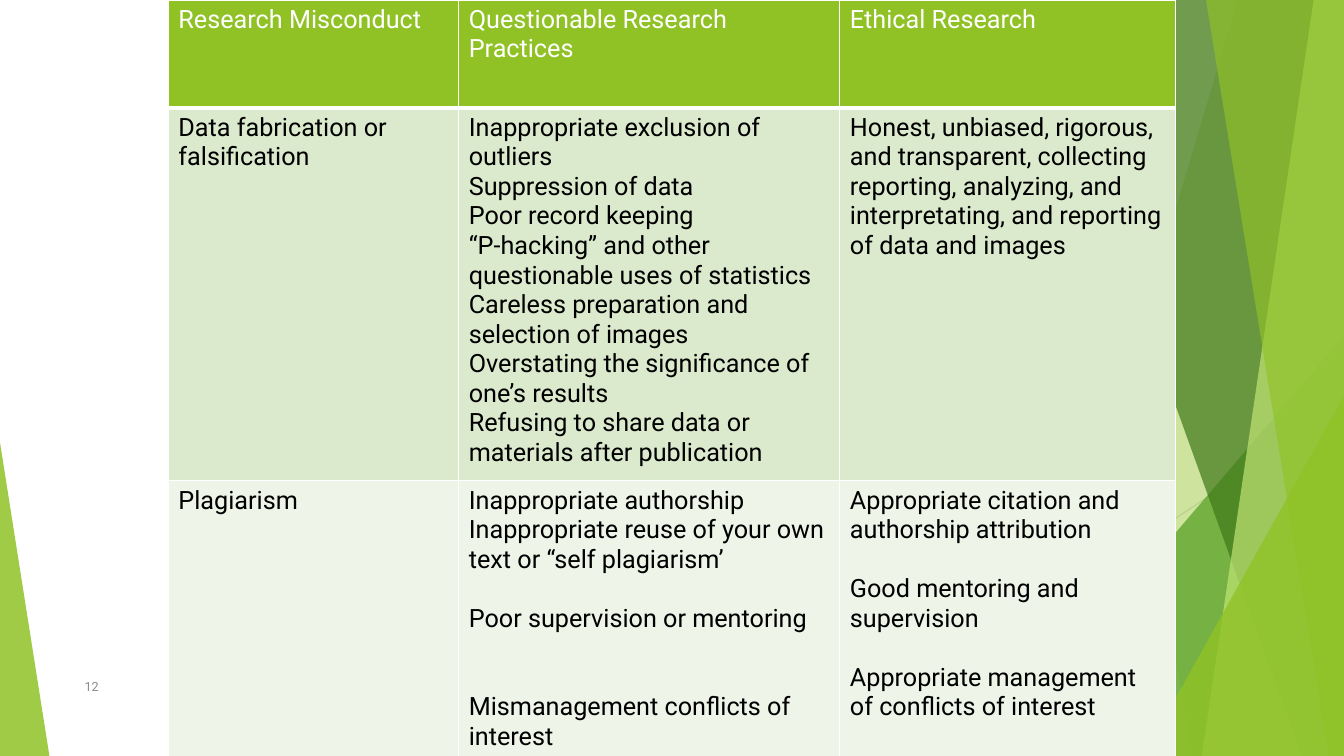
from lxml.etree import SubElement
from pptx import Presentation
from pptx.dml.color import RGBColor
from pptx.enum.shapes import MSO_CONNECTOR, MSO_SHAPE
from pptx.enum.text import MSO_ANCHOR
from pptx.oxml.ns import qn
from pptx.util import Pt

PX = 9144  # EMU per px, 100 px to the inch
W, H = 1333, 750

THEME = {
    "font": "Roboto", "body": 18, "number": 9, "gap": 21,
    "white": "FFFFFF", "black": "000000", "gray": "8C8C8C",
    "line_dark": "BFBFBF", "line_light": "D9D9D9",
    "lime": "90C226", "green": "54A021", "forest": "3F7819", "pale": "C0E474",
    "band1": "DBE9CD", "band2": "EEF4E8",
}

# Cell texts: each paragraph is text, or (text, blank lines before it)
HEADER = ["Research Misconduct", "Questionable Research Practices", "Ethical Research"]
ROWS = [
    [
        ["Data fabrication or falsification"],
        ["Inappropriate exclusion of outliers",
         "Suppression of data",
         "Poor record keeping",
         "“P-hacking” and other questionable uses of statistics",
         "Careless preparation and selection of images",
         "Overstating the significance of one’s results",
         "Refusing to share data or materials after publication"],
        ["Honest, unbiased, rigorous, and transparent, collecting reporting, "
         "analyzing, and interpretating, and reporting of data and images"],
    ],
    [
        ["Plagiarism"],
        ["Inappropriate authorship",
         "Inappropriate reuse of your own text or “self plagiarism’",
         ("Poor supervision or mentoring", 1),
         ("Mismanagement conflicts of interest", 2)],
        ["Appropriate citation and authorship attribution",
         ("Good mentoring and supervision", 1),
         ("Appropriate management of conflicts of interest", 1)],
    ],
]
COL_WIDTHS = [288, 378, 333]
ROW_HEIGHTS = [107, 353, 291]


def rgb(name):
    return RGBColor.from_string(THEME[name])


def px(*values):
    return [v * PX for v in values]


def style_run(r, size, color):
    formats = {"name": THEME["font"], "size": Pt(THEME[size])}
    for key, value in formats.items():
        setattr(r.font, key, value)
    r.font.color.rgb = rgb(color)


def paint(sp, color, opacity):
    sp.shadow.inherit = False
    sp.fill.solid()
    sp.fill.fore_color.rgb = rgb(color)
    sp.line.fill.background()
    clr = sp.fill._xPr.find(qn("a:solidFill"))[0]
    SubElement(clr, qn("a:alpha")).set("val", str(opacity * 1000))


def add_line(s, x1, y1, x2, y2, color):
    c = s.shapes.add_connector(MSO_CONNECTOR.STRAIGHT, *px(x1, y1, x2, y2))
    c.line.color.rgb = rgb(color)
    c.line.width = Pt(0.75)
    SubElement(c._element.spPr, qn("a:effectLst"))


def add_facet(s, points, color, opacity):
    fb = s.shapes.build_freeform(*points[0], scale=PX)
    fb.add_line_segments(points[1:], close=True)
    paint(fb.convert_to_shape(), color, opacity)


def add_triangle(s, box, apex, color, opacity):
    sp = s.shapes.add_shape(MSO_SHAPE.ISOSCELES_TRIANGLE, *px(*box))
    sp.adjustments[0] = apex
    paint(sp, color, opacity)


def add_page_number(s, text):
    tf = s.shapes.add_textbox(*px(74, 661, 689, 40)).text_frame
    formats = {"word_wrap": True, "vertical_anchor": MSO_ANCHOR.MIDDLE}
    for key, value in formats.items():
        setattr(tf, key, value)
    r = tf.paragraphs[0].add_run()
    r.text = text
    style_run(r, "number", "gray")


def set_borders(cell, bottom):
    tcPr = cell._tc.get_or_add_tcPr()
    for side, width in {"L": 1, "R": 1, "T": 1, "B": bottom}.items():
        ln = SubElement(tcPr, qn(f"a:ln{side}"), w=str(Pt(width)))
        fill = SubElement(ln, qn("a:solidFill"))
        SubElement(fill, qn("a:srgbClr"), val=THEME["white"])


def fill_cell(cell, paragraphs, color, fill, bottom=1):
    set_borders(cell, bottom)
    cell.fill.solid()
    cell.fill.fore_color.rgb = rgb(fill)
    tf = cell.text_frame
    for i, item in enumerate(paragraphs):
        text, blanks = (item, 0) if isinstance(item, str) else item
        p = tf.paragraphs[0] if i == 0 else tf.add_paragraph()
        if blanks:
            p.space_before = Pt(blanks * THEME["gap"])
        r = p.add_run()
        r.text = text
        style_run(r, "body", color)


def add_research_table(s):
    box = px(167, 0, sum(COL_WIDTHS), sum(ROW_HEIGHTS))
    table = s.shapes.add_table(len(ROW_HEIGHTS), len(COL_WIDTHS), *box).table
    for column, width in zip(table.columns, COL_WIDTHS):
        column.width = width * PX
    for row, height in zip(table.rows, ROW_HEIGHTS):
        row.height = height * PX
    for key in ("first_row", "horz_banding"):
        setattr(table, key, False)
    for c, title in enumerate(HEADER):
        fill_cell(table.cell(0, c), [title], "white", "lime", bottom=3)
    for r, (row, band) in enumerate(zip(ROWS, ("band1", "band2")), start=1):
        for c, paragraphs in enumerate(row):
            fill_cell(table.cell(r, c), paragraphs, "black", band)


def add_background(s):
    add_line(s, 1025, 0, 1158, H, "line_dark")
    add_line(s, W, 403, 812, H, "line_light")

    # Facets reach the right edge; each has its own slanted left side
    def facet(top, bottom, color, opacity):
        points = [(top, -1), (W, -1), (W, H), (bottom, H)]
        add_facet(s, points, color, opacity)

    facet(1228, 1004, "lime", 30)
    facet(1050, 1183, "lime", 20)
    add_triangle(s, (977, 333, 356, 417), 1, "green", 72)
    facet(1021, 1291, "forest", 70)
    facet(1303, 1192, "pale", 70)
    facet(1196, 1318, "lime", 65)
    add_triangle(s, (1134, 393, 199, 357), 1, "lime", 80)
    add_triangle(s, (0, 439, 49, 311), 0, "lime", 85)


def main():
    prs = Presentation()
    prs.slide_width, prs.slide_height = px(W, H)
    s = prs.slides.add_slide(prs.slide_layouts[6])
    add_background(s)
    add_page_number(s, "12")
    add_research_table(s)
    prs.save("out.pptx")


if __name__ == "__main__":
    main()
